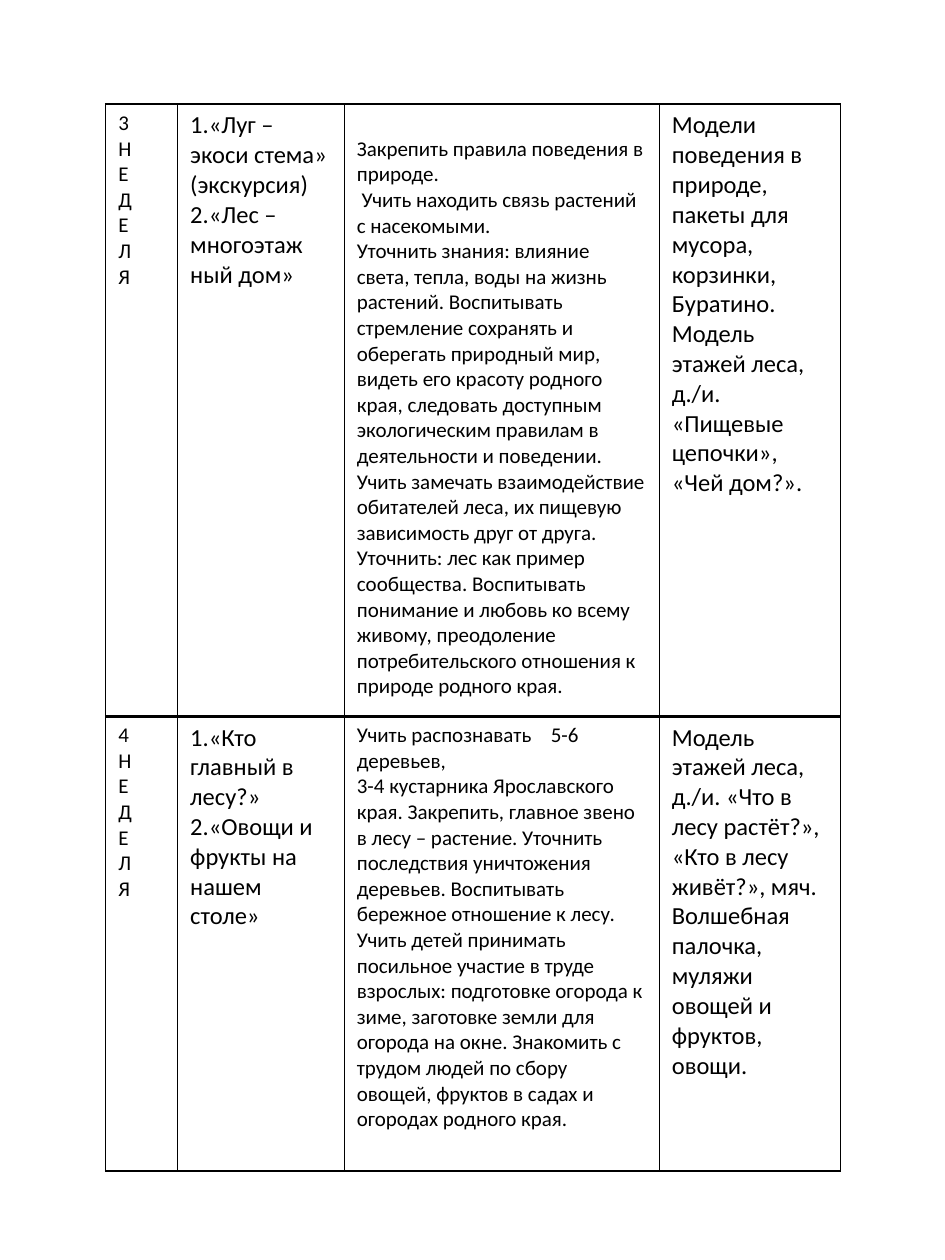
"""Build a slide with the plan of lessons for weeks 3 and 4."""
import pptx
import pptx.dml.color
import pptx.oxml
import pptx.oxml.ns
import pptx.util

Cm, Pt = pptx.util.Cm, pptx.util.Pt
BLACK = pptx.dml.color.RGBColor(0, 0, 0)
WHITE = pptx.dml.color.RGBColor(255, 255, 255)

WEEKS = [
    [
        list("3НЕДЕЛЯ"),
        ["1.«Луг – экоси стема»", "(экскурсия)", "2.«Лес –многоэтаж", "ный дом»"],
        [
            "Закрепить правила поведения в природе.",
            " Учить находить связь растений с насекомыми.",
            "Уточнить знания: влияние света, тепла, воды на жизнь растений. "
            "Воспитывать стремление сохранять и оберегать природный мир, "
            "видеть его красоту родного края, следовать доступным "
            "экологическим правилам в деятельности и поведении.",
            "Учить замечать взаимодействие обитателей леса, их пищевую "
            "зависимость друг от друга. Уточнить: лес как пример сообщества. "
            "Воспитывать понимание и любовь ко всему живому, преодоление "
            "потребительского отношения к природе родного края.",
        ],
        [
            "Модели поведения в природе, пакеты для мусора, корзинки, Буратино.",
            "Модель этажей леса, д./и. «Пищевые цепочки», «Чей дом?».",
        ],
    ],
    [
        list("4НЕДЕЛЯ"),
        ["1.«Кто главный в лесу?»", "2.«Овощи и фрукты на нашем столе»"],
        [
            "Учить распознавать\t5-6 деревьев,",
            "3-4 кустарника Ярославского края. Закрепить, главное звено в лесу "
            "– растение. Уточнить последствия уничтожения деревьев. "
            "Воспитывать бережное отношение к лесу.",
            "Учить детей принимать посильное участие в труде взрослых: "
            "подготовке огорода к зиме, заготовке земли для огорода на окне. "
            "Знакомить с трудом людей по сбору овощей, фруктов в садах и "
            "огородах родного края.",
        ],
        [
            "Модель этажей леса, д./и. «Что в лесу растёт?», «Кто в лесу "
            "живёт?», мяч. Волшебная палочка, муляжи овощей и фруктов, овощи.",
        ],
    ],
]
LEFT, TOP = Cm(2.13), Cm(2.1)
COLUMN_WIDTHS = [Cm(1.45), Cm(3.36), Cm(6.35), Cm(3.65)]
ROW_HEIGHTS = [Cm(12.34), Cm(9.17)]
COLUMN_SIZES = [Pt(12), Pt(14), Pt(12), Pt(14)]
BOTTOM_BORDERS = [Pt(2), Pt(1)]
TOP_MARGINS = {(0, 2): Cm(0.65)}
TAB_STOP = Cm(3.91)


def add_borders(cell, bottom):
    """Draw black lines on the four sides of a cell."""
    tc_pr = cell._tc.get_or_add_tcPr()
    for side in "LRTB":
        width = bottom if side == "B" else Pt(1)
        tc_pr.append(pptx.oxml.parse_xml(
            f'<a:ln{side} {pptx.oxml.ns.nsdecls("a")} w="{width}">'
            f'<a:solidFill><a:srgbClr val="{BLACK}"/></a:solidFill></a:ln{side}>'))


def add_tab_stop(p):
    """Set the tab stop of a paragraph."""
    p._p.get_or_add_pPr().append(pptx.oxml.parse_xml(
        f'<a:tabLst {pptx.oxml.ns.nsdecls("a")}>'
        f'<a:tab pos="{TAB_STOP}" algn="l"/></a:tabLst>'))


def fill_text(tf, lines, size):
    """Write each line as a paragraph."""
    for i, line in enumerate(lines):
        p = tf.paragraphs[0] if i == 0 else tf.add_paragraph()
        if "\t" in line:
            add_tab_stop(p)
        r = p.add_run()
        r.text = line
        for name, value in {"name": "Calibri", "size": size, "bold": False}.items():
            setattr(r.font, name, value)
        r.font.color.rgb = BLACK


def main():
    """Build and save the slide."""
    prs = pptx.Presentation()
    prs.slide_width, prs.slide_height = Cm(19.05), Cm(25.4)
    s = prs.slides.add_slide(prs.slide_layouts[6])
    table = s.shapes.add_table(
        len(WEEKS), len(COLUMN_WIDTHS), LEFT, TOP,
        sum(COLUMN_WIDTHS), sum(ROW_HEIGHTS)).table
    for name in ("first_row", "horz_banding"):
        setattr(table, name, False)
    for column, width in zip(table.columns, COLUMN_WIDTHS):
        column.width = width
    for i, week in enumerate(WEEKS):
        table.rows[i].height = ROW_HEIGHTS[i]
        for j, lines in enumerate(week):
            cell = table.cell(i, j)
            add_borders(cell, BOTTOM_BORDERS[i])
            cell.fill.solid()
            cell.fill.fore_color.rgb = WHITE
            cell.margin_top = TOP_MARGINS.get((i, j), Cm(0.13))
            fill_text(cell.text_frame, lines, COLUMN_SIZES[j])
    prs.save("out.pptx")


if __name__ == "__main__":
    main()
